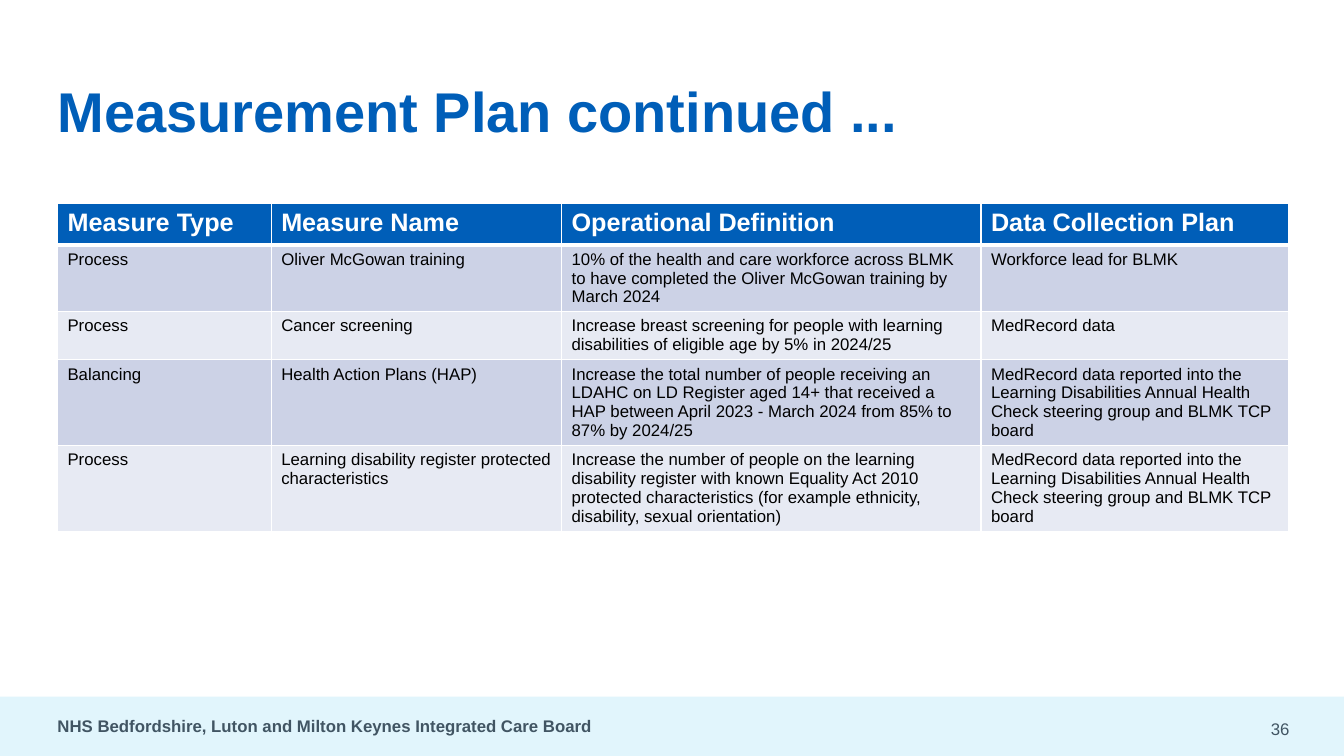
from lxml import etree
from pptx import Presentation
from pptx.dml.color import RGBColor
from pptx.enum.shapes import MSO_SHAPE
from pptx.enum.text import MSO_ANCHOR, PP_ALIGN
from pptx.oxml.ns import qn
from pptx.util import Inches, Pt

RECTANGLE = MSO_SHAPE.RECTANGLE
MIDDLE = MSO_ANCHOR.MIDDLE
LEFT, RIGHT = PP_ALIGN.LEFT, PP_ALIGN.RIGHT

FONT = "Arial"
COLOURS = {
    "blue": "005EB8",
    "white": "FFFFFF",
    "black": "000000",
    "footer_band": "E1F5FC",
    "footer_text": "415563",
    "odd_row": "CCD2E6",
    "even_row": "E7EAF3",
}
MARGIN = 0.57

COLUMN_WIDTHS = [2.12, 2.88, 4.16, 3.05]
ROW_HEIGHTS = [0.41, 0.65, 0.48, 0.85, 0.85]
MEASURES = [
    ["Measure Type", "Measure Name", "Operational Definition", "Data Collection Plan"],
    ["Process", "Oliver McGowan training",
     "10% of the health and care workforce across BLMK to have completed "
     "the Oliver McGowan training by March 2024",
     "Workforce lead for BLMK"],
    ["Process", "Cancer screening",
     "Increase breast screening for people with learning disabilities of "
     "eligible age by 5% in 2024/25",
     "MedRecord data"],
    ["Balancing", "Health Action Plans (HAP)",
     "Increase the total number of people receiving an LDAHC on LD Register "
     "aged 14+ that received a HAP between April 2023 - March 2024 from 85% "
     "to 87% by 2024/25",
     "MedRecord data reported into the Learning Disabilities Annual Health "
     "Check steering group and BLMK TCP board"],
    ["Process", "Learning disability register protected characteristics",
     "Increase the number of people on the learning disability register with "
     "known Equality Act 2010 protected characteristics (for example "
     "ethnicity, disability, sexual orientation)",
     "MedRecord data reported into the Learning Disabilities Annual "
     "Health Check steering group and BLMK TCP board"],
]


def colour(name):
    return RGBColor.from_string(COLOURS[name])


def write_text(frame, text, size, colour_name, bold=False, align=LEFT):
    frame.word_wrap = True
    paragraph = frame.paragraphs[0]
    paragraph.text = text
    paragraph.alignment = align
    font = paragraph.font
    font.name, font.size, font.bold = FONT, Pt(size), bold
    font.color.rgb = colour(colour_name)


def clear_insets(frame):
    frame.margin_left = frame.margin_right = 0
    frame.margin_top = frame.margin_bottom = 0
    frame.vertical_anchor = MIDDLE


def add_title(slide, text):
    title = slide.shapes.title
    title.left, title.top = Inches(MARGIN), Inches(0.42)
    title.width, title.height = Inches(9.64), Inches(1.35)
    clear_insets(title.text_frame)
    write_text(title.text_frame, text, 40, "blue", bold=True)


def add_label(slide, box, text, **style):
    label = slide.shapes.add_textbox(*map(Inches, box))
    clear_insets(label.text_frame)
    write_text(label.text_frame, text, 12, "footer_text", **style)


def add_footer_band(slide):
    band = slide.shapes.add_shape(
        RECTANGLE, 0, Inches(6.91), Inches(13.33), Inches(0.59))
    band.shadow.inherit = False
    band.fill.solid()
    band.fill.fore_color.rgb = colour("footer_band")
    band.line.fill.background()


def set_borders(cell, widths):
    properties = cell._tc.get_or_add_tcPr()
    for side, width in widths.items():
        line = etree.SubElement(properties, qn(f"a:ln{side}"), w=str(Pt(width)))
        fill = etree.SubElement(line, qn("a:solidFill"))
        etree.SubElement(fill, qn("a:srgbClr"), val=COLOURS["white"])


def add_measure_table(slide):
    table = slide.shapes.add_table(
        len(MEASURES), len(COLUMN_WIDTHS), Inches(MARGIN), Inches(2.02),
        Inches(sum(COLUMN_WIDTHS)), Inches(sum(ROW_HEIGHTS))).table
    for column, width in zip(table.columns, COLUMN_WIDTHS):
        column.width = Inches(width)
    for index, (row, height, texts) in enumerate(
            zip(table.rows, ROW_HEIGHTS, MEASURES)):
        row.height = Inches(height)
        header = index == 0
        if header:
            fill_name = "blue"
        else:
            fill_name = "odd_row" if index % 2 else "even_row"
        # The thick rule lies between the header and the first measure
        borders = {"L": 1, "R": 1, "T": 3 if index == 1 else 1,
                   "B": 3 if header else 1}
        for cell, text in zip(row.cells, texts):
            set_borders(cell, borders)
            cell.fill.solid()
            cell.fill.fore_color.rgb = colour(fill_name)
            write_text(cell.text_frame, text, 18 if header else 12,
                       "white" if header else "black", bold=header)


def main():
    deck = Presentation()
    deck.slide_width, deck.slide_height = Inches(13.33), Inches(7.5)
    slide = deck.slides.add_slide(deck.slide_layouts.get_by_name("Title Only"))

    # Title and table
    add_footer_band(slide)
    add_title(slide, "Measurement Plan continued ...")
    add_measure_table(slide)

    # Footer
    add_label(slide, (MARGIN, 6.91, 8.1, 0.59),
              "NHS Bedfordshire, Luton and Milton Keynes Integrated Care Board",
              bold=True)
    add_label(slide, (12.26, 6.95, 0.53, 0.55), "36", align=RIGHT)

    deck.save("out.pptx")


if __name__ == "__main__":
    main()
